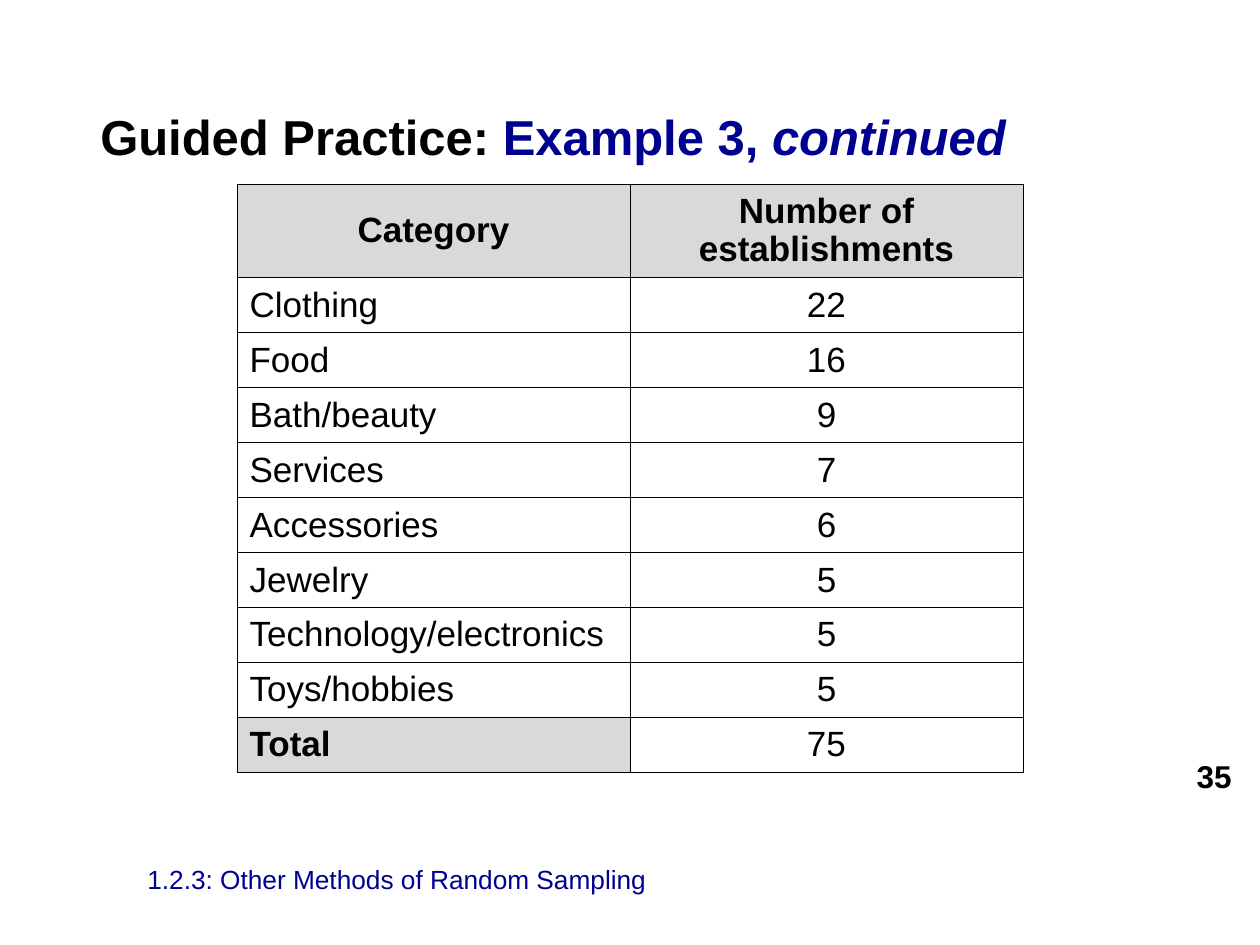
from pptx import Presentation
from pptx.dml.color import RGBColor
from pptx.enum.text import MSO_ANCHOR as Anchor, PP_ALIGN as Align
from pptx.oxml import parse_xml
from pptx.oxml.ns import nsdecls
from pptx.util import Emu, Pt

PX_PER_INCH = 126
BLACK = RGBColor(0x00, 0x00, 0x00)
NAVY = RGBColor(0x00, 0x00, 0x90)
GREY = RGBColor(0xD9, 0xD9, 0xD9)
WHITE = RGBColor(0xFF, 0xFF, 0xFF)

HEADER = ("Category", "Number of\nestablishments")
COUNTS = [
    ("Clothing", 22),
    ("Food", 16),
    ("Bath/beauty", 9),
    ("Services", 7),
    ("Accessories", 6),
    ("Jewelry", 5),
    ("Technology/electronics", 5),
    ("Toys/hobbies", 5),
]
HEADER_HEIGHT, ROW_HEIGHT, COLUMN_WIDTH = 91, 55, 393


def px(length):
    return Emu(round(length * 914400 / PX_PER_INCH))


def write(paragraph, text, size, color=BLACK, bold=False, italic=False,
          align=Align.LEFT):
    """Append text to a paragraph; a newline becomes a line break."""
    paragraph.alignment = align
    for index, line in enumerate(text.split("\n")):
        if index:
            paragraph.add_line_break()
        run = paragraph.add_run()
        run.text = line
        font = run.font
        font.name, font.size = "Arial", Pt(size)
        font.bold, font.italic = bold, italic
        font.color.rgb = color


def add_text_box(slide, left, top, width, height, anchor=Anchor.MIDDLE,
                 inset_top=6):
    """Add an empty text box and return its first paragraph."""
    box = slide.shapes.add_textbox(px(left), px(top), px(width), px(height))
    frame = box.text_frame
    frame.word_wrap = True
    frame.vertical_anchor = anchor
    frame.margin_top = px(inset_top)
    return frame.paragraphs[0]


def add_borders(cell):
    properties = cell._tc.get_or_add_tcPr()
    for side in "LRTB":
        properties.append(parse_xml(
            f'<a:ln{side} {nsdecls("a")} w="{Pt(0.5)}"><a:solidFill>'
            f'<a:srgbClr val="{BLACK}"/></a:solidFill></a:ln{side}>'))


def fill_cell(cell, text, fill=WHITE, bold=False, align=Align.LEFT):
    add_borders(cell)
    cell.fill.solid()
    cell.fill.fore_color.rgb = fill
    cell.vertical_anchor = Anchor.MIDDLE
    cell.margin_top = cell.margin_bottom = px(6)
    paragraph = cell.text_frame.paragraphs[0]
    if "\n" in text:
        paragraph.line_spacing = 0.97
    write(paragraph, text, 20, bold=bold, align=align)


def add_count_table(slide, left, top):
    total = sum(count for _, count in COUNTS)
    rows = [HEADER, *COUNTS, ("Total", total)]
    table = slide.shapes.add_table(
        len(rows), 2, px(left), px(top), px(2 * COLUMN_WIDTH),
        px(HEADER_HEIGHT + ROW_HEIGHT * (len(rows) - 1))).table
    for column in table.columns:
        column.width = px(COLUMN_WIDTH)
    for index, (category, count) in enumerate(rows):
        is_header = index == 0
        is_label = is_header or category == "Total"
        table.rows[index].height = px(HEADER_HEIGHT if is_header else ROW_HEIGHT)
        fill_cell(table.cell(index, 0), category,
                  fill=GREY if is_label else WHITE, bold=is_label,
                  align=Align.CENTER if is_header else Align.LEFT)
        fill_cell(table.cell(index, 1), str(count),
                  fill=GREY if is_header else WHITE, bold=is_header,
                  align=Align.CENTER)


def main():
    deck = Presentation()
    deck.slide_width, deck.slide_height = px(1260), px(945)
    slide = deck.slides.add_slide(deck.slide_layouts[6])

    title = add_text_box(slide, 88, 93, 1082, 689, Anchor.TOP, inset_top=13)
    write(title, "Guided Practice: ", 28, bold=True)
    write(title, "Example 3, ", 28, NAVY, bold=True)
    write(title, "continued", 28, NAVY, bold=True, italic=True)

    page_number = add_text_box(slide, 1143, 757, 101, 39)
    write(page_number, "35", 18, bold=True, align=Align.RIGHT)

    lesson = add_text_box(slide, 135, 861, 791, 37)
    write(lesson, "1.2.3: Other Methods of Random Sampling", 15, NAVY)

    add_count_table(slide, 237, 184)
    deck.save("out.pptx")


if __name__ == "__main__":
    main()
